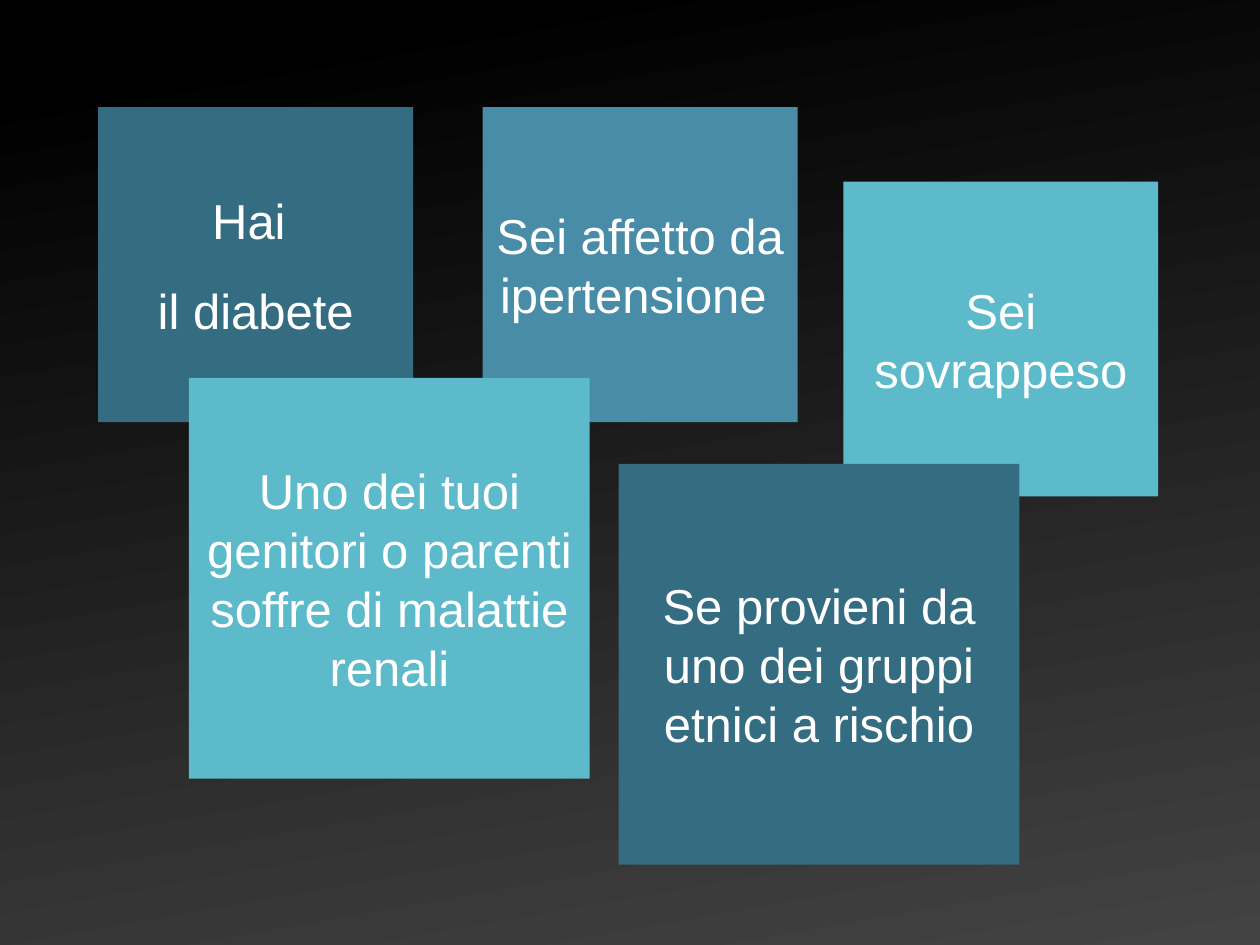
import dataclasses

import pptx
import pptx.dml.color
import pptx.enum.shapes
import pptx.enum.text
import pptx.util

Cm = pptx.util.Cm
Pt = pptx.util.Pt
Rgb = pptx.dml.color.RGBColor.from_string


@dataclasses.dataclass(frozen=True)
class Theme:
    font: str = "Arial"
    size: int = 28
    gap: int = 18
    text: str = "FFFFFF"
    dark: str = "346C81"
    mid: str = "488CA7"
    light: str = "5DBACA"
    fade: tuple = ((0.08, "000000"), (1, "434343"))
    angle: int = 280


THEME = Theme()
SMALL, LARGE = 6.35, 8.08  # tile sides in cm

# Left, top, side, fill, paragraphs; later tiles overlap earlier ones
TILES = (
    (1.98, 2.16, SMALL, THEME.dark, ("Hai ", "il diabete")),
    (9.73, 2.16, SMALL, THEME.mid, ("Sei affetto da ipertensione ",)),
    (17, 3.66, SMALL, THEME.light, ("Sei sovrappeso",)),
    (3.81, 7.62, LARGE, THEME.light,
     ("Uno dei tuoi genitori o parenti soffre di malattie renali",)),
    (12.47, 9.35, LARGE, THEME.dark,
     ("Se provieni da uno dei gruppi etnici a rischio",)),
)


def paint(slide):
    """Fill the background with the dark gradient."""
    fill = slide.background.fill
    fill.gradient()
    fill.gradient_angle = THEME.angle
    for stop, (place, color) in zip(fill.gradient_stops, THEME.fade):
        stop.position = place
        stop.color.rgb = Rgb(color)


def write(frame, lines):
    """Put centred paragraphs into a text frame."""
    frame.word_wrap = True
    frame.vertical_anchor = pptx.enum.text.MSO_ANCHOR.MIDDLE
    for i, line in enumerate(lines):
        para = frame.add_paragraph() if i else frame.paragraphs[0]
        para.text = line
        para.alignment = pptx.enum.text.PP_ALIGN.CENTER
        para.space_before = Pt(THEME.gap if i else 0)
        para.font.name = THEME.font
        para.font.size = Pt(THEME.size)
        para.font.color.rgb = Rgb(THEME.text)


def tile(slide, left, top, side, color, lines):
    """Add a square, flat tile with text."""
    shape = slide.shapes.add_shape(
        pptx.enum.shapes.MSO_SHAPE.RECTANGLE,
        Cm(left), Cm(top), Cm(side), Cm(side))
    shape.shadow.inherit = False
    shape.fill.solid()
    shape.fill.fore_color.rgb = Rgb(color)
    shape.line.fill.background()
    write(shape.text_frame, lines)


def main():
    deck = pptx.Presentation()
    deck.slide_width, deck.slide_height = Cm(25.4), Cm(19.05)
    slide = deck.slides.add_slide(deck.slide_layouts[6])

    # Background
    paint(slide)

    # Risk factor tiles
    for item in TILES:
        tile(slide, *item)

    deck.save("out.pptx")


if __name__ == "__main__":
    main()
